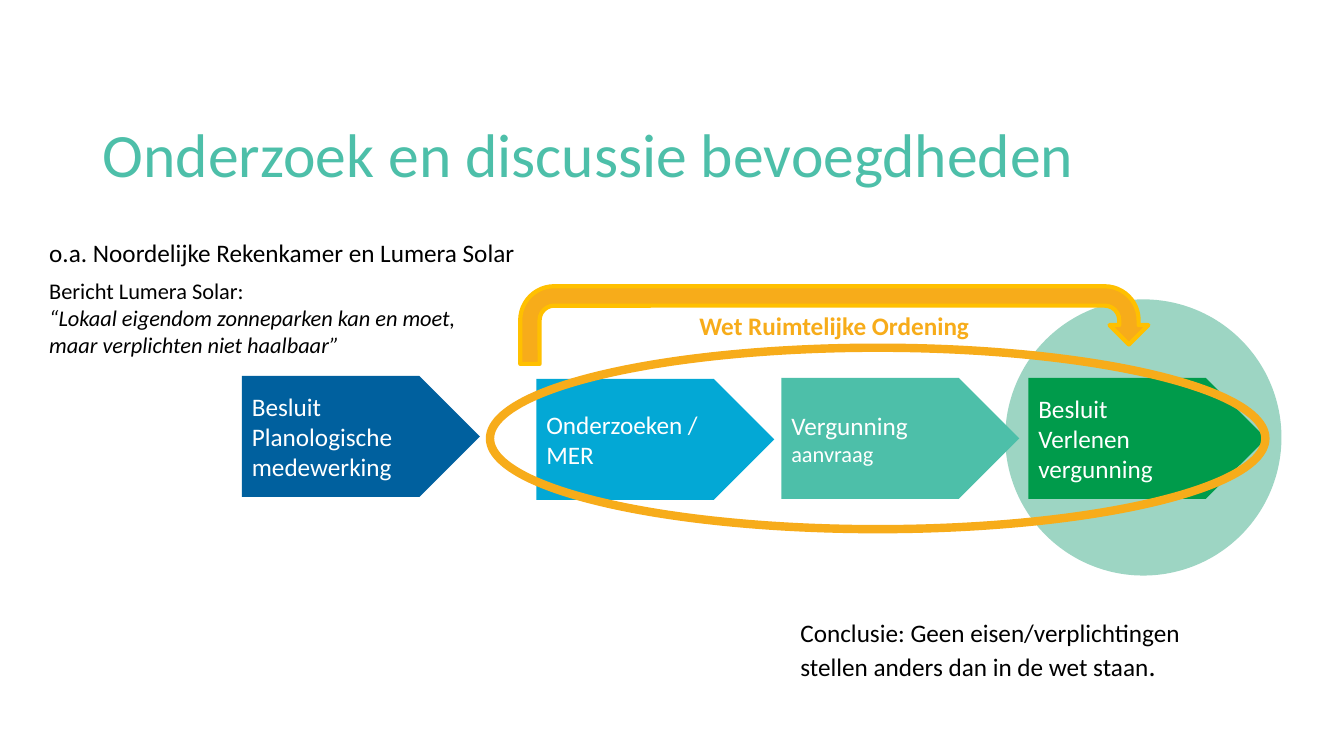
import pptx
import pptx.util
import pptx.dml.color
import pptx.enum.shapes
import pptx.enum.text

Inches = pptx.util.Inches
SHAPE = pptx.enum.shapes.MSO_SHAPE
ALIGN = pptx.enum.text.PP_ALIGN
ANCHOR = pptx.enum.text.MSO_ANCHOR

ORANGE = "F7AC1A"
TEAL = "4DBFA9"

STEPS = [
    (2.4, 3.73, "00609E", [("Besluit", 18), ("Planologische medewerking", 18)]),
    (5.32, 3.76, "03A8D5", [("Onderzoeken / MER", 18)]),
    (7.75, 3.75, TEAL, [("Vergunning", 18), ("aanvraag", 16)]),
    (10.2, 3.75, "009B4B", [("Besluit", 18), ("Verlenen vergunning", 18)]),
]


def rgb(color):
    return pptx.dml.color.RGBColor.from_string(color)


def style(font, size, color, **values):
    for name, value in {"name": "Calibri", "size": pptx.util.Pt(size), **values}.items():
        setattr(font, name, value)
    font.color.rgb = rgb(color)


def add_text(p, text, size, color, **values):
    r = p.add_run()
    r.text = text
    style(r.font, size, color, **values)


def next_paragraph(tf, index):
    return tf.add_paragraph() if index else tf.paragraphs[0]


def add_title(slide, text):
    sp = slide.shapes.title
    place = {"left": 0.92, "top": 0.84, "width": 11.5, "height": 1.45}
    for name, value in place.items():
        setattr(sp, name, Inches(value))
    tf = sp.text_frame
    tf.vertical_anchor = ANCHOR.MIDDLE
    p = tf.paragraphs[0]
    p.alignment = ALIGN.LEFT
    p.line_spacing = 0.9
    add_text(p, text, 44, TEAL)


def add_figure(slide, kind, box, fill=None, line=None, width=0):
    sp = slide.shapes.add_shape(kind, *map(Inches, box))
    sp.shadow.inherit = False
    if fill:
        sp.fill.solid()
        sp.fill.fore_color.rgb = rgb(fill)
    else:
        sp.fill.background()
    if line:
        sp.line.color.rgb = rgb(line)
        sp.line.width = pptx.util.Pt(width)
    else:
        sp.line.fill.background()
    return sp


def add_step(slide, left, top, color, lines):
    sp = add_figure(slide, SHAPE.PENTAGON, (left, top, 2.36, 1.2), color)
    tf = sp.text_frame
    tf.vertical_anchor = ANCHOR.MIDDLE
    for i, (text, size) in enumerate(lines):
        p = next_paragraph(tf, i)
        p.alignment = ALIGN.LEFT
        add_text(p, text, size, "FFFFFF")


def add_note(slide, box, paragraphs):
    tf = slide.shapes.add_textbox(*map(Inches, box)).text_frame
    tf.word_wrap = True
    for i, runs in enumerate(paragraphs):
        p = next_paragraph(tf, i)
        for text, size in runs:
            add_text(p, text, size, "000000")
    return tf


def add_quote(tf, lines, size):
    p = tf.add_paragraph()
    for i, text in enumerate(lines):
        if i:
            p.add_line_break()
        add_text(p, text, size, "000000", italic=True)


def add_law_arrow(slide, text):
    sp = add_figure(slide, SHAPE.U_TURN_ARROW, (5.16, 2.84, 6.23, 0.77), ORANGE, "FFC000", 3)
    tf = sp.text_frame
    tf.vertical_anchor = ANCHOR.MIDDLE
    p = tf.paragraphs[0]
    p.alignment = ALIGN.CENTER
    add_text(p, text, 18, ORANGE, bold=True)


def main():
    prs = pptx.Presentation()
    prs.slide_width = Inches(13.33)
    prs.slide_height = Inches(7.5)
    slide = prs.slides.add_slide(prs.slide_layouts[5])

    add_title(slide, "Onderzoek en discussie bevoegdheden")
    for step in STEPS[:2]:
        add_step(slide, *step)
    add_figure(slide, SHAPE.OVAL, (9.97, 2.97, 2.74, 2.74), "9DD5C3")
    for step in STEPS[2:]:
        add_step(slide, *step)

    message = add_note(slide, (0.39, 2.7, 4.96, 1.21), [[("Bericht Lumera Solar:", 16)]])
    add_quote(message, ["“Lokaal eigendom zonneparken kan en moet,", "maar verplichten niet haalbaar”"], 16)
    add_note(slide, (7.84, 6.08, 4.58, 0.74), [
        [("Conclusie: Geen eisen/verplichtingen", 18)],
        [("stellen anders dan in de wet staan", 18), (".", 20)],
    ])
    add_note(slide, (0.39, 2.31, 5.76, 0.4), [[("o.a. Noordelijke Rekenkamer en Lumera Solar", 18)]])

    add_figure(slide, SHAPE.OVAL, (4.86, 3.45, 7.69, 1.8), line=ORANGE, width=6)
    add_law_arrow(slide, "Wet Ruimtelijke Ordening")
    prs.save("out.pptx")


if __name__ == "__main__":
    main()
